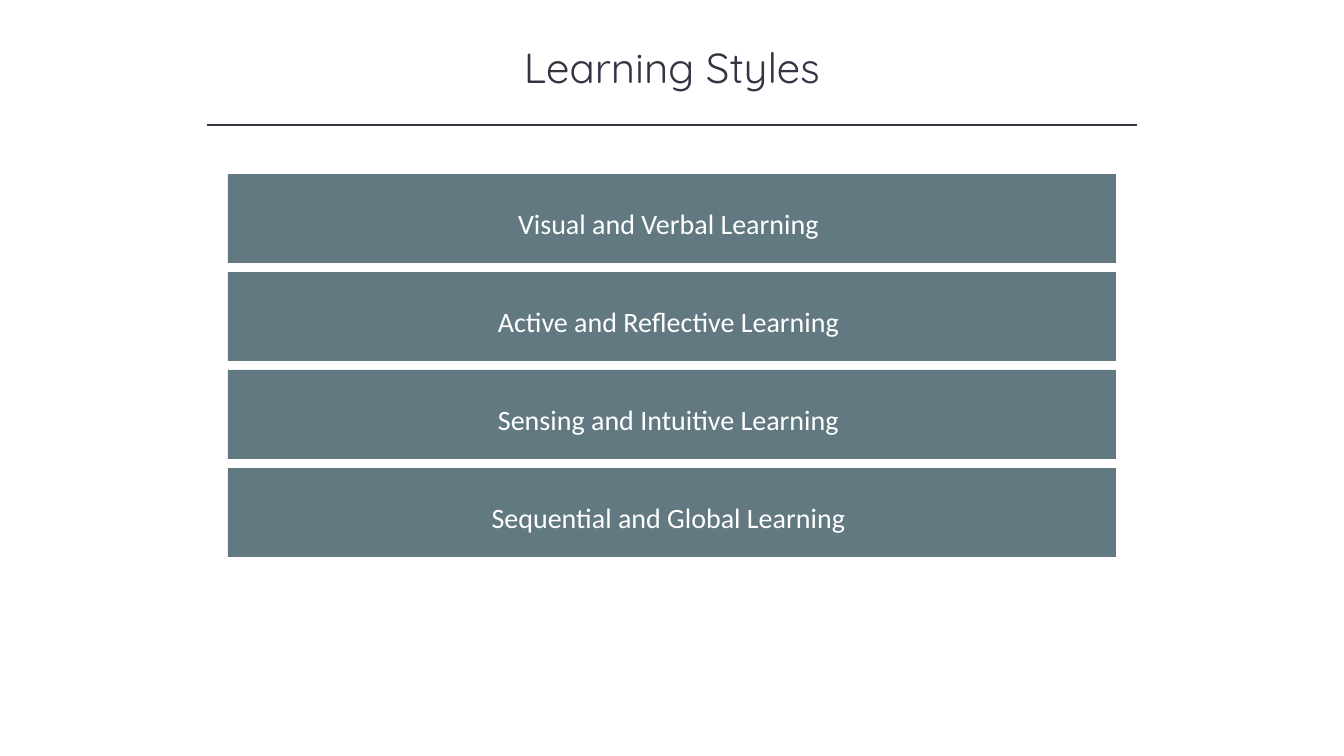
import pptx
import pptx.util
import pptx.dml.color
import pptx.enum.shapes
import pptx.enum.text
import pptx.oxml.ns
import lxml.etree

SCALE = 914400 / 100.8
COLORS = {"ink": "323542", "bar": "627981", "white": "FFFFFF"}
FORMATS = {
    "title": {"name": "Quicksand", "size": pptx.util.Pt(30)},
    "label": {"name": "Calibri", "size": pptx.util.Pt(20)},
}
STYLES = [
    "Visual and Verbal Learning",
    "Active and Reflective Learning",
    "Sensing and Intuitive Learning",
    "Sequential and Global Learning",
]
TOP, PITCH = 174, 98


def px(*values):
    return [pptx.util.Emu(round(value * SCALE)) for value in values]


def color(name):
    return pptx.dml.color.RGBColor.from_string(COLORS[name])


def write(shape, text, style, ink):
    frame = shape.text_frame
    frame.word_wrap = True
    frame.auto_size = pptx.enum.text.MSO_AUTO_SIZE.SHAPE_TO_FIT_TEXT
    frame.vertical_anchor = pptx.enum.text.MSO_ANCHOR.TOP
    para = frame.paragraphs[0]
    para.alignment = pptx.enum.text.PP_ALIGN.CENTER
    run = para.add_run()
    run.text = text
    for key, value in FORMATS[style].items():
        setattr(run.font, key, value)
    run.font.color.rgb = color(ink)


def add_title(slide, text):
    box = slide.shapes.add_textbox(*px(168, 37, 1008, 61))
    write(box, text, "title", "ink")


def add_rule(slide):
    kind = pptx.enum.shapes.MSO_CONNECTOR.STRAIGHT
    rule = slide.shapes.add_connector(kind, *px(207, 125, 1137, 125))
    rule.line.color.rgb = color("ink")
    rule.line.width = pptx.util.Pt(1)
    props = rule._element.spPr
    lxml.etree.SubElement(props, pptx.oxml.ns.qn("a:effectLst"))


def add_block(slide, *place):
    kind = pptx.enum.shapes.MSO_SHAPE.RECTANGLE
    block = slide.shapes.add_shape(kind, *px(*place))
    block.shadow.inherit = False
    block.fill.solid()
    block.fill.fore_color.rgb = color("bar")
    block.line.fill.background()
    return block


def add_bar(slide, top, text):
    add_block(slide, 228, top, 888, 89)
    label = add_block(slide, 238, top + 28, 861, 44)
    write(label, text, "label", "white")


def main():
    deck = pptx.Presentation()
    deck.slide_width, deck.slide_height = px(1344, 756)
    slide = deck.slides.add_slide(deck.slide_layouts[6])
    add_title(slide, "Learning Styles")
    add_rule(slide)
    for index, text in enumerate(STYLES):
        add_bar(slide, TOP + index * PITCH, text)
    deck.save("out.pptx")


if __name__ == "__main__":
    main()
